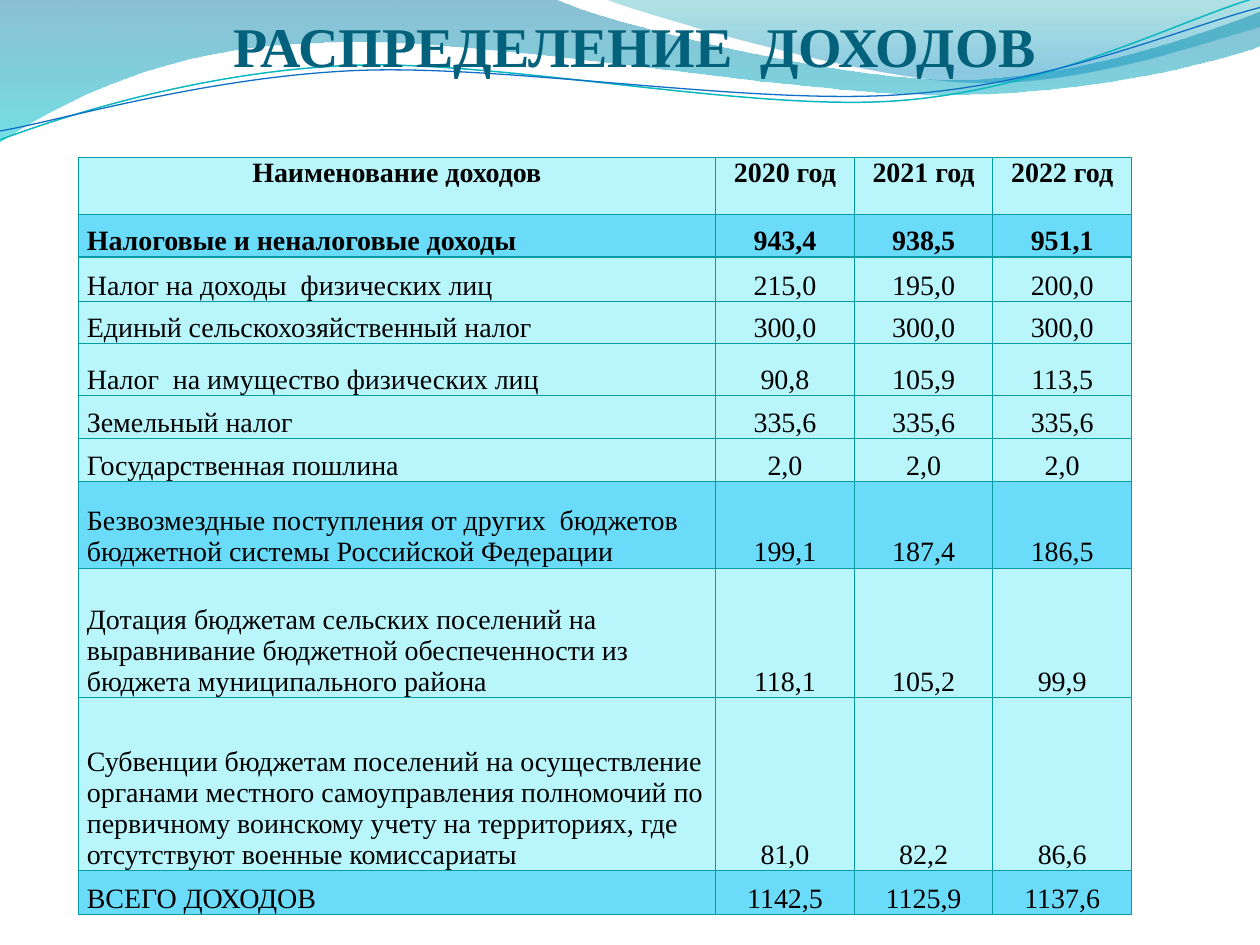
from typing import NamedTuple

from lxml import etree
from pptx import Presentation
from pptx.dml.color import RGBColor
from pptx.enum import text
from pptx.oxml import ns
from pptx.util import Emu, Inches, Pt

FONT = "Times New Roman"
PALE, BRIGHT, BORDER = "B8F6FC", "6BDBFA", "069CA3"


class Stop(NamedTuple):
    position: float
    color: str
    opacity: int


class Wave(NamedTuple):
    """A segment of two numbers is a line, one of six a cubic curve."""
    start: tuple[float, float]
    segments: list[tuple[float, ...]]
    gradient: tuple[Stop, ...] = ()
    line_color: str = ""
    line_width: float = 0


class Income(NamedTuple):
    name: str
    values: tuple[str, str, str]
    height: float
    fill: str = PALE
    bold: bool = False
    anchor: text.MSO_ANCHOR = text.MSO_ANCHOR.BOTTOM


WAVES = [
    Wave((0, 0), [(4.4, -0.01), (4.76, 0.17, 6.64, 0.63, 7.58, 0.63),
                  (8.53, 0.63, 9.58, 0.26, 10, 0.09), (10.01, 0.36),
                  (9.83, 0.44, 8.7, 0.76, 7.46, 0.75),
                  (6.22, 0.75, 3.82, 0.28, 2.57, 0.34),
                  (1.29, 0.36, 0.46, 0.83, -0.01, 1.13), (0, 0)],
         gradient=(Stop(0, "0074A1", 45), Stop(1, "00C6CF", 55))),
    Wave((4.79, -0.01), [(5.09, 0.11, 6.82, 0.62, 7.69, 0.65),
                         (8.56, 0.69, 9.61, 0.32, 10, 0.21), (10, 0),
                         (4.79, -0.01)],
         gradient=(Stop(0, "00A1A9", 30), Stop(0.8, "008BBF", 45))),
    Wave((0, 1.11), [(0.48, 0.93, 1.58, 0.57, 2.77, 0.52),
                     (3.95, 0.47, 5.93, 0.89, 7.13, 0.8),
                     (8.33, 0.71, 9.38, 0.15, 9.98, -0.02)],
         line_color="0AB8BF", line_width=0.85),
    Wave((0, 1.04), [(0.47, 0.96, 1.64, 0.61, 2.83, 0.56),
                     (4.03, 0.51, 5.97, 0.84, 7.17, 0.75),
                     (8.36, 0.67, 9.41, 0.21, 10, 0.06)],
         line_color="0F6FC6", line_width=0.75),
]

INCOMES = [
    Income("Наименование доходов", ("2020 год", "2021 год", "2022 год"), 0.45,
           bold=True, anchor=text.MSO_ANCHOR.TOP),
    Income("Налоговые и неналоговые доходы", ("943,4", "938,5", "951,1"), 0.34,
           BRIGHT, bold=True),
    Income("Налог на доходы  физических лиц", ("215,0", "195,0", "200,0"), 0.35),
    Income("Единый сельскохозяйственный налог", ("300,0", "300,0", "300,0"), 0.34),
    Income("Налог  на имущество физических лиц", ("90,8", "105,9", "113,5"), 0.41),
    Income("Земельный налог", ("335,6", "335,6", "335,6"), 0.34),
    Income("Государственная пошлина", ("2,0", "2,0", "2,0"), 0.34),
    Income("Безвозмездные поступления от других  бюджетов бюджетной системы "
           "Российской Федерации", ("199,1", "187,4", "186,5"), 0.69, BRIGHT),
    Income("Дотация бюджетам сельских поселений на выравнивание бюджетной "
           "обеспеченности из бюджета муниципального района",
           ("118,1", "105,2", "99,9"), 1.03),
    Income("Субвенции бюджетам поселений на осуществление органами местного "
           "самоуправления полномочий по первичному воинскому учету на "
           "территориях, где отсутствуют военные комиссариаты",
           ("81,0", "82,2", "86,6"), 1.37),
    Income("ВСЕГО ДОХОДОВ", ("1142,5", "1125,9", "1137,6"), 0.35, BRIGHT),
]
COLUMN_WIDTHS = [5.06, 1.1, 1.1, 1.1]


def rgb(color: str) -> RGBColor:
    return RGBColor.from_string(color)


def set_all(target, formats: dict) -> None:
    for name, value in formats.items():
        setattr(target, name, value)


def write(paragraph, words: str, size: float, color: str, bold: bool, align) -> None:
    paragraph.alignment = align
    run = paragraph.add_run()
    run.text = words
    set_all(run.font, {"name": FONT, "size": Pt(size), "bold": bold})
    run.font.color.rgb = rgb(color)


def bend(shape, segments: list[tuple[float, ...]]) -> None:
    """Join each three straight steps of a curved segment into one cubic curve."""
    steps = iter(list(shape._element.iter(ns.qn("a:lnTo"))))
    for segment in segments:
        group = [next(steps) for _ in range(len(segment) // 2)]
        if len(group) == 1:
            continue
        curve = etree.Element(ns.qn("a:cubicBezTo"))
        group[0].addprevious(curve)
        for step in group:
            curve.append(step[0])
            step.getparent().remove(step)


def paint_gradient(fill, stops: tuple[Stop, ...]) -> None:
    fill.gradient()
    fill.gradient_angle = 270
    for gradient_stop, stop in zip(fill.gradient_stops, stops):
        gradient_stop.position = stop.position
        gradient_stop.color.rgb = rgb(stop.color)
    colors = fill._xPr.iter(ns.qn("a:srgbClr"))
    for color, stop in zip(colors, stops):
        etree.SubElement(color, ns.qn("a:alpha"), val=str(stop.opacity * 1000))


def draw_wave(slide, wave: Wave) -> None:
    points = [(Inches(segment[i]), Inches(segment[i + 1]))
              for segment in wave.segments for i in range(0, len(segment), 2)]
    left, top = wave.start
    builder = slide.shapes.build_freeform(Inches(left), Inches(top), scale=1.0)
    builder.add_line_segments(points, close=bool(wave.gradient))
    shape = builder.convert_to_shape()
    bend(shape, wave.segments)
    shape.shadow.inherit = False
    if wave.gradient:
        paint_gradient(shape.fill, wave.gradient)
        shape.line.fill.background()
    else:
        shape.fill.background()
        shape.line.color.rgb = rgb(wave.line_color)
        shape.line.width = Pt(wave.line_width)


def draw_title(slide, words: str) -> None:
    box = slide.shapes.add_textbox(Inches(0.5), Inches(0.19), Inches(9.08), Inches(0.39))
    set_all(box.text_frame, {
        "word_wrap": True, "vertical_anchor": text.MSO_ANCHOR.MIDDLE,
        "margin_left": 0, "margin_right": 0, "margin_top": 0,
        "margin_bottom": Inches(0.05)})
    write(box.text_frame.paragraphs[0], words, 32, "04617B", True, text.PP_ALIGN.CENTER)


def add_borders(cell) -> None:
    properties = cell._tc.get_or_add_tcPr()
    for side in ("lnL", "lnR", "lnT", "lnB"):
        border = etree.SubElement(properties, ns.qn(f"a:{side}"), w=str(Pt(0.75)))
        solid = etree.SubElement(border, ns.qn("a:solidFill"))
        etree.SubElement(solid, ns.qn("a:srgbClr"), val=BORDER)


def draw_incomes(slide) -> None:
    height = sum(income.height for income in INCOMES)
    table = slide.shapes.add_table(
        len(INCOMES), len(COLUMN_WIDTHS), Inches(0.62), Inches(1.25),
        Inches(sum(COLUMN_WIDTHS)), Inches(height)).table
    set_all(table, {"first_row": False, "horz_banding": False})
    for column, width in zip(table.columns, COLUMN_WIDTHS):
        column.width = Inches(width)
    for row, income in zip(table.rows, INCOMES):
        row.height = Inches(income.height)
        is_header = income is INCOMES[0]
        for index, (cell, words) in enumerate(zip(row.cells, (income.name, *income.values))):
            set_all(cell, {
                "margin_left": Inches(0.07), "margin_right": Inches(0.07),
                "margin_top": Emu(0), "margin_bottom": Emu(0),
                "vertical_anchor": income.anchor})
            add_borders(cell)
            cell.fill.solid()
            cell.fill.fore_color.rgb = rgb(income.fill)
            centred = is_header or index > 0
            align = text.PP_ALIGN.CENTER if centred else text.PP_ALIGN.LEFT
            write(cell.text_frame.paragraphs[0], words, 16, "000000", income.bold, align)


def main() -> None:
    deck = Presentation()
    set_all(deck, {"slide_width": Inches(10), "slide_height": Inches(7.5)})
    slide = deck.slides.add_slide(deck.slide_layouts[6])
    for wave in WAVES:
        draw_wave(slide, wave)
    draw_title(slide, "РАСПРЕДЕЛЕНИЕ  ДОХОДОВ")
    draw_incomes(slide)
    deck.save("out.pptx")


if __name__ == "__main__":
    main()
